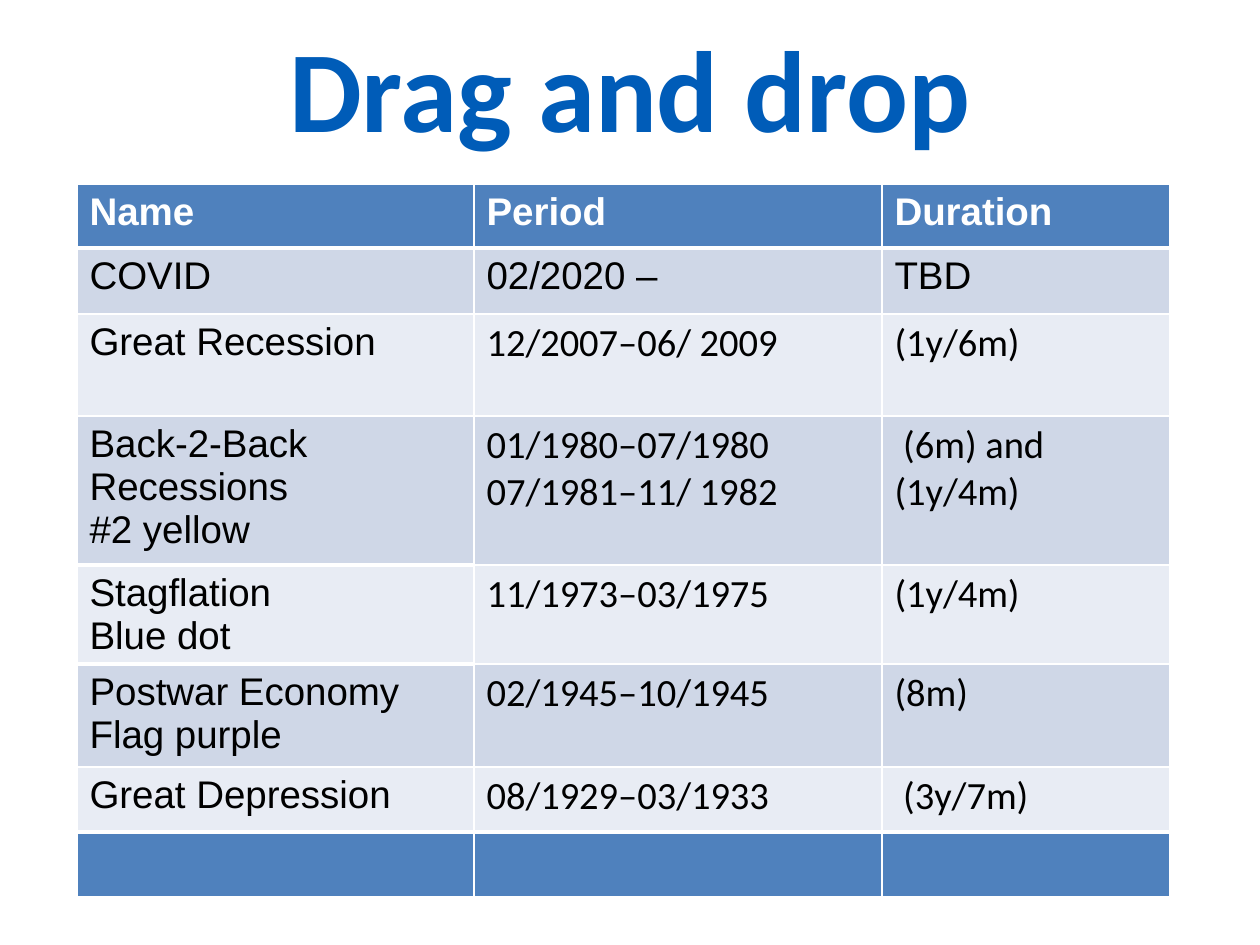
from lxml.etree import SubElement
from pptx import Presentation
from pptx.dml.color import RGBColor
from pptx.enum.text import MSO_ANCHOR, PP_ALIGN
from pptx.oxml.ns import qn
from pptx.util import Pt

COLORS = {
    "title": "005CB8",
    "header": "4F81BD",
    "dark_band": "CFD7E7",
    "light_band": "E8ECF4",
    "border": "FFFFFF",
    "header_text": "FFFFFF",
    "text": "000000",
}
TITLE = "Drag and drop"
ROWS = [
    ("Name", "Period", "Duration"),
    ("COVID", "02/2020 –", "TBD"),
    ("Great Recession", "12/2007–06/ 2009", "(1y/6m)"),
    ("Back-2-Back Recessions\n#2 yellow", "01/1980–07/1980\n07/1981–11/ 1982", " (6m) and (1y/4m)"),
    ("Stagflation\nBlue dot", "11/1973–03/1975", "(1y/4m)"),
    ("Postwar Economy\nFlag purple", "02/1945–10/1945", "(8m)"),
    ("Great Depression", "08/1929–03/1933", " (3y/7m)"),
    ("", "", ""),
]
COLUMN_WIDTHS = [397, 408, 288]
ROW_HEIGHTS = [64, 66, 102, 149, 99, 103, 65, 65]
TABLE_LEFT, TABLE_TOP = 77, 184
TITLE_BOX = (63, 18, 1134, 157)
LAST_ROW = len(ROWS) - 1
# Columns whose border below the given row is thick
THICK_BELOW = {0: (0, 1, 2), 3: (0,), 4: (0,), 6: (0, 1, 2)}


def px(length):
    return round(length * 914400 / 126)


def color(name):
    return RGBColor.from_string(COLORS[name])


def add_borders(cell, widths):
    """Put border lines of the given point widths ahead of the cell's fill."""
    properties = cell._tc.get_or_add_tcPr()
    for index, (side, width) in enumerate(widths.items()):
        line = SubElement(properties, qn(f"a:ln{side}"), w=str(Pt(width)))
        fill = SubElement(line, qn("a:solidFill"))
        SubElement(fill, qn("a:srgbClr"), val=COLORS["border"])
        properties.insert(index, line)


def format_cell(cell, row, column):
    is_header = row == 0
    cell.text = ROWS[row][column]
    if row in (0, LAST_ROW):
        band = "header"
    else:
        band = "dark_band" if row % 2 else "light_band"
    cell.fill.solid()
    cell.fill.fore_color.rgb = color(band)
    for paragraph in cell.text_frame.paragraphs:
        font = paragraph.font
        font.name = "Calibri" if column and row > 1 else "Arial"
        font.size = Pt(22)
        font.bold = is_header
        font.color.rgb = color("header_text" if is_header else "text")
    add_borders(cell, {
        "L": 1,
        "R": 1,
        "T": 3 if column in THICK_BELOW.get(row - 1, ()) else 1,
        "B": 3 if column in THICK_BELOW.get(row, ()) else 1,
    })


def add_title(slide):
    title = slide.shapes.title
    title.left, title.top, title.width, title.height = map(px, TITLE_BOX)
    title.text_frame.text = TITLE
    title.text_frame.vertical_anchor = MSO_ANCHOR.MIDDLE
    paragraph = title.text_frame.paragraphs[0]
    paragraph.alignment = PP_ALIGN.CENTER
    paragraph.line_spacing = 0.86
    paragraph.font.name = "Calibri"
    paragraph.font.size = Pt(66)
    paragraph.font.bold = True
    paragraph.font.color.rgb = color("title")


def add_recession_table(slide):
    table = slide.shapes.add_table(
        len(ROWS), len(COLUMN_WIDTHS), px(TABLE_LEFT), px(TABLE_TOP),
        px(sum(COLUMN_WIDTHS)), px(sum(ROW_HEIGHTS))).table
    table.first_row = table.horz_banding = False
    for column, width in zip(table.columns, COLUMN_WIDTHS):
        column.width = px(width)
    for row, height in enumerate(ROW_HEIGHTS):
        table.rows[row].height = px(height)
        for column in range(len(COLUMN_WIDTHS)):
            format_cell(table.cell(row, column), row, column)


def main():
    presentation = Presentation()
    presentation.slide_width, presentation.slide_height = px(1260), px(945)
    slide = presentation.slides.add_slide(presentation.slide_layouts[5])
    add_title(slide)
    add_recession_table(slide)
    presentation.save("out.pptx")


if __name__ == "__main__":
    main()
